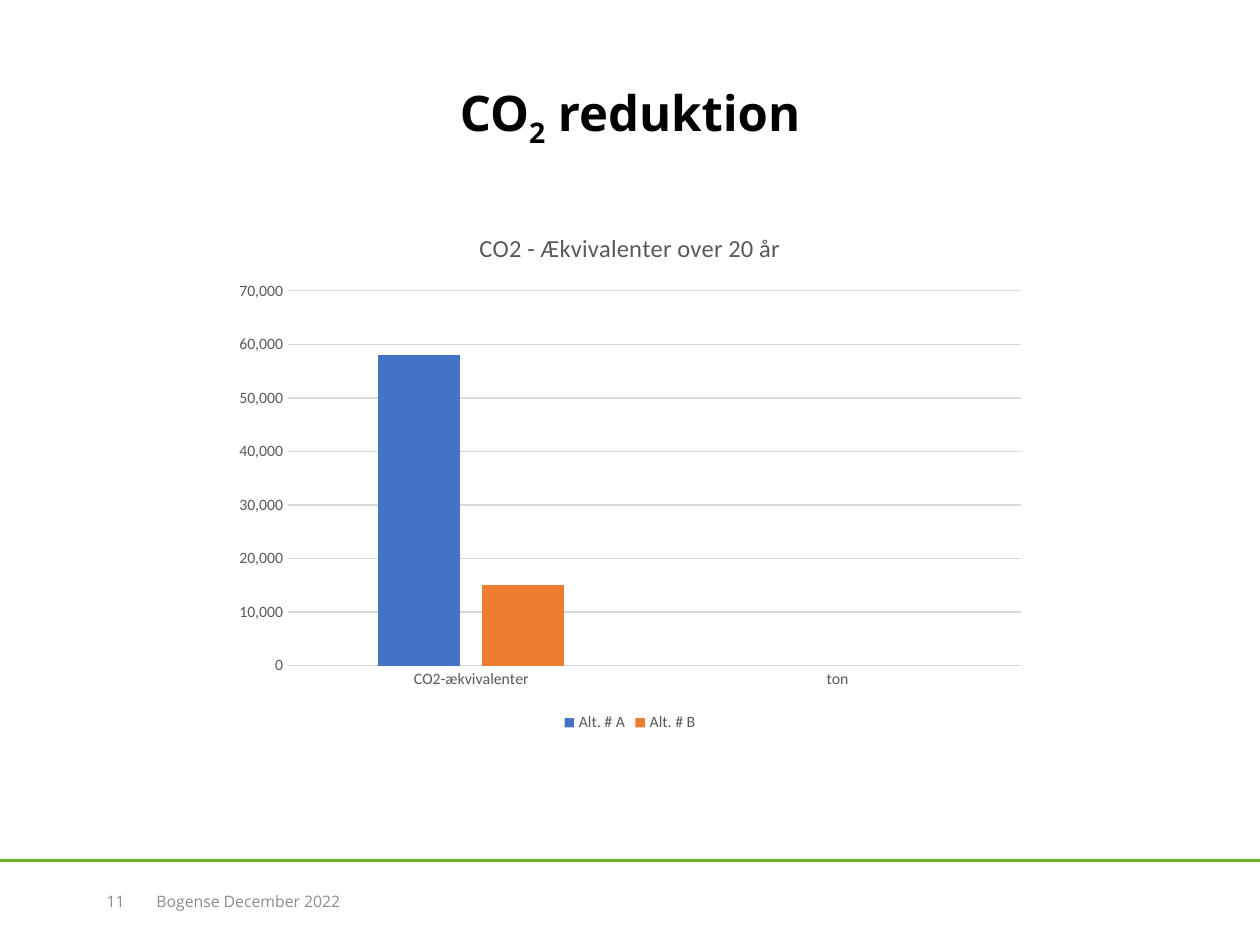
from pptx import Presentation
from pptx.chart.data import CategoryChartData
from pptx.dml.color import RGBColor
from pptx.enum.chart import (XL_CHART_TYPE as Kind, XL_LEGEND_POSITION as Pos,
                             XL_TICK_MARK as Tick)
from pptx.enum.shapes import MSO_SHAPE as Form
from pptx.enum.text import MSO_ANCHOR as Anchor, PP_ALIGN as Align
from pptx.util import Pt

PX = 914400 / 126
COLORS = {"black": "000000", "rule": "6AB023", "foot": "8C8C8C",
          "label": "595959", "grid": "D9D9D9",
          "alt_a": "4472C4", "alt_b": "ED7D31"}


def px(*nums):
    return [round(n * PX) for n in nums]


def rgb(name):
    return RGBColor.from_string(COLORS[name])


def style(font, face, size, color, bold=False):
    font.name, font.size, font.bold = face, Pt(size), bold
    font.color.rgb = rgb(color)


def add_text(slide, box, runs, size, color, align, bold=False, after=0):
    """Add one line of text; runs are (text, baseline shift) pairs."""
    frame = slide.shapes.add_textbox(*px(*box)).text_frame
    frame.word_wrap = True
    frame.vertical_anchor = Anchor.MIDDLE
    para = frame.paragraphs[0]
    para.alignment = align
    para.space_after = Pt(after)
    style(para.font, "Open Sans", size, color, bold)
    for text, shift in runs:
        run = para.add_run()
        run.text = text
        if shift:
            run.font._element.set("baseline", str(shift))


def add_rule(slide, box):
    rule = slide.shapes.add_shape(Form.RECTANGLE, *px(*box))
    rule.shadow.inherit = False
    rule.fill.solid()
    rule.fill.fore_color.rgb = rgb("rule")
    rule.line.fill.background()


def set_line(line):
    line.color.rgb = rgb("grid")
    line.width = Pt(0.75)


def style_axes(chart):
    for axis in (chart.category_axis, chart.value_axis):
        axis.major_tick_mark = axis.minor_tick_mark = Tick.NONE
        style(axis.tick_labels.font, "Calibri", 9, "label")
    set_line(chart.category_axis.format.line)
    value = chart.value_axis
    value.minimum_scale, value.maximum_scale = 0, 70000
    value.major_unit = 10000
    value.format.line.fill.background()
    value.has_major_gridlines = True
    set_line(value.major_gridlines.format.line)
    value.tick_labels.number_format = "#,##0"
    value.tick_labels.number_format_is_linked = False


def add_bars(slide, box, title, cats, series):
    data = CategoryChartData(number_format="#,##0")
    data.categories = cats
    for name, vals, _ in series:
        data.add_series(name, vals)
    chart = slide.shapes.add_chart(Kind.COLUMN_CLUSTERED, *px(*box), data).chart
    style(chart.font, "Calibri", 10, "black")

    chart.has_title = True
    para = chart.chart_title.text_frame.paragraphs[0]
    para.text = title
    style(para.font, "Calibri", 14, "label")
    chart.chart_title.include_in_layout = False

    chart.has_legend = True
    chart.legend.position = Pos.BOTTOM
    chart.legend.include_in_layout = False
    style(chart.legend.font, "Calibri", 9, "label")

    plot = chart.plots[0]
    plot.gap_width, plot.overlap = 219, -27
    plot.vary_by_categories = False
    for bars, (_, _, color) in zip(plot.series, series):
        bars.invert_if_negative = False
        bars.format.fill.solid()
        bars.format.fill.fore_color.rgb = rgb(color)
    style_axes(chart)


def main():
    deck = Presentation()
    deck.slide_width, deck.slide_height = px(1260, 945)
    slide = deck.slides.add_slide(deck.slide_layouts[6])
    add_rule(slide, (0, 859, 1260, 3))
    add_text(slide, (63, 76, 1134, 80),
             [("CO", 0), ("2", -25000), (" reduktion", 0)],
             28, "black", Align.CENTER, bold=True)
    add_text(slide, (64, 876, 73, 50), [("11", 0)],
             9, "foot", Align.RIGHT, after=6)
    add_bars(slide, (223, 209, 814, 528), "CO2 - Ækvivalenter over 20 år",
             ("CO2-ækvivalenter", "ton"),
             [("Alt. # A", (58000, None), "alt_a"),
              ("Alt. # B", (15000, None), "alt_b")])
    add_text(slide, (144, 876, 863, 50), [("Bogense December 2022", 0)],
             9, "foot", Align.LEFT)
    deck.save("out.pptx")


if __name__ == "__main__":
    main()
